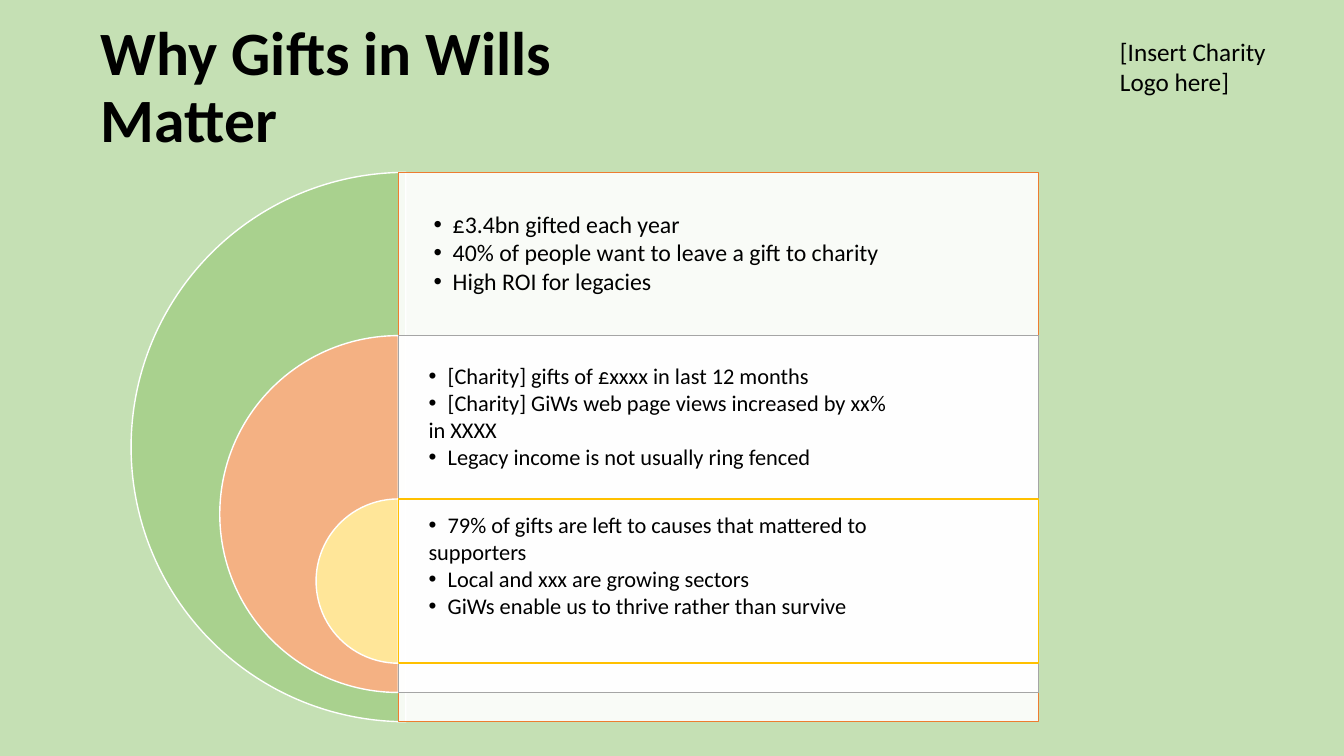
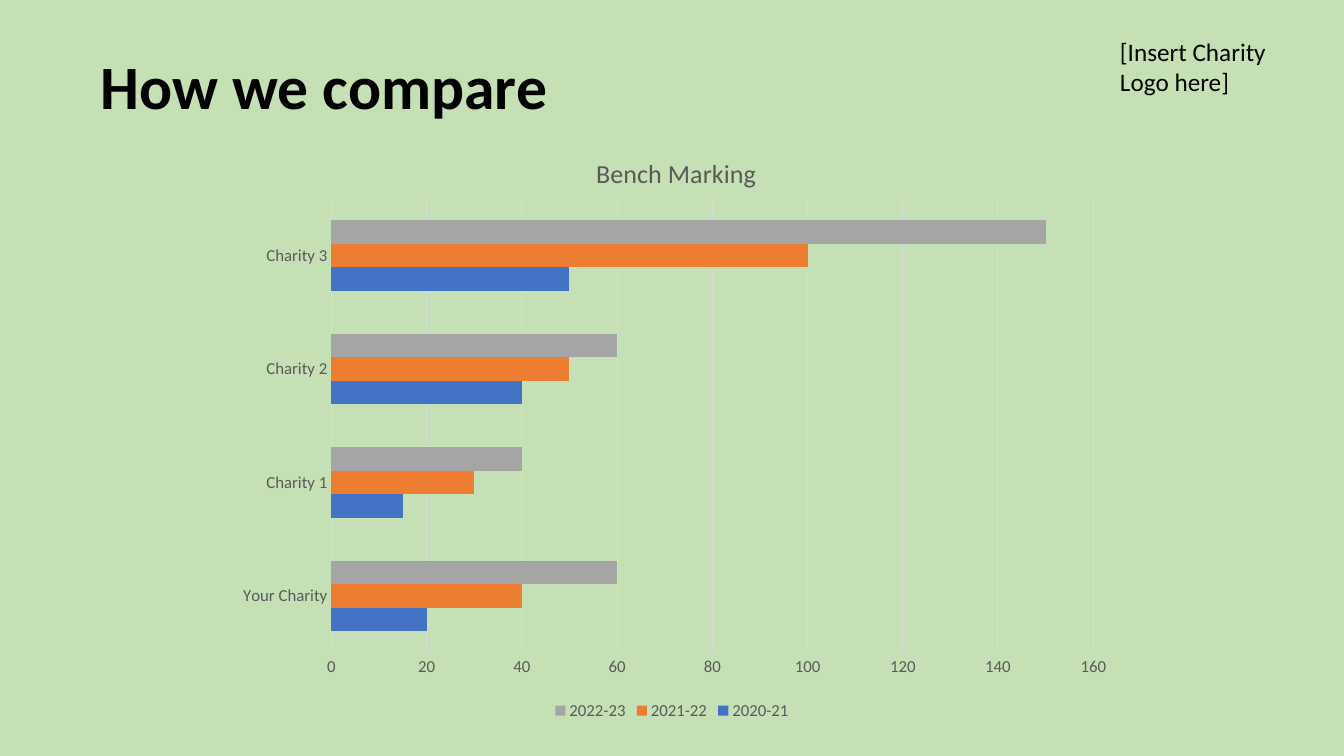
from lxml import etree
from pptx import Presentation
from pptx import util as u
from pptx.chart import data as cd
from pptx.dml.color import RGBColor
from pptx.enum import chart as ch, shapes, text
from pptx.oxml import ns, parse_xml

# Shared look
FONT = "Calibri"
BACK = RGBColor(0xC5, 0xE0, 0xB4)
BLACK = RGBColor(0, 0, 0)
WHITE = RGBColor(0xFF, 0xFF, 0xFF)
GREEN = RGBColor(0xA9, 0xD1, 0x8E)
PEACH = RGBColor(0xF4, 0xB1, 0x83)
CREAM = RGBColor(0xFF, 0xE6, 0x99)
BLUE = RGBColor(0x44, 0x72, 0xC4)
ORANGE = RGBColor(0xED, 0x7D, 0x31)
GREY = RGBColor(0xA5, 0xA5, 0xA5)
GOLD = RGBColor(0xFF, 0xC0, 0x00)
INK = RGBColor(0x59, 0x59, 0x59)
PALE = RGBColor(0xD9, 0xD9, 0xD9)

# Boxes in inches: left, top, width, height
HEAD = (0.9, 0.16, 6.45, 1.45)
MARK = (11.01, 0.31, 1.78, 1.62)
RINGS = (1.3, 1.71, 9, 5.45)
GRAPH = (2.22, 1.26, 8.89, 5.93)

# Each ring: pie fill, panel line, text size, spare space below, lines (bulleted, text)
ROWS = [
    (GREEN, ORANGE, 17, 0, [
        (True, "£3.4bn gifted each year"),
        (True, "40% of people want to leave a gift to charity"),
        (True, "High ROI for legacies")]),
    (PEACH, GREY, 16, 0, [
        (True, "[Charity] gifts of £xxxx in last 12 months"),
        (True, "[Charity] GiWs web page views increased by xx%"),
        (False, "in XXXX"),
        (True, "Legacy income is not usually ring fenced")]),
    (CREAM, GOLD, 16, 0.28, [
        (True, "79% of gifts are left to causes that mattered to"),
        (False, "supporters"),
        (True, "Local and xxx are growing sectors"),
        (True, "GiWs enable us to thrive rather than survive")]),
]

CATS = ["Your Charity", "Charity 1", "Charity 2", "Charity 3"]
SERIES = [
    ("2020-21", (20, 15, 40, 50), BLUE),
    ("2021-22", (40, 30, 50, 100), ORANGE),
    ("2022-23", (60, 40, 60, 150), GREY),
]


def inch(*box):
    return [u.Inches(v) for v in box]


def place(shape, box):
    shape.left, shape.top, shape.width, shape.height = inch(*box)


def style(font, size, color, bold=False):
    font.name, font.size, font.bold = FONT, u.Pt(size), bold
    font.color.rgb = color


def write(par, words, size, bold=False):
    run = par.add_run()
    run.text = words
    style(run.font, size, BLACK, bold)


def start(prs, layout, words):
    """Add a slide with its heading and the logo note."""
    slide = prs.slides.add_slide(prs.slide_layouts[layout])
    title = slide.shapes.title
    place(title, HEAD)
    frame = title.text_frame
    frame.auto_size = text.MSO_AUTO_SIZE.NONE
    frame.vertical_anchor = text.MSO_ANCHOR.MIDDLE
    par = frame.paragraphs[0]
    par.alignment = text.PP_ALIGN.LEFT
    par.line_spacing = 0.9
    write(par, words, 44, True)

    note = slide.shapes.add_textbox(*inch(*MARK)).text_frame
    note.word_wrap = True
    write(note.paragraphs[0], "[Insert Charity Logo here]", 18)
    return slide


def block(slide, kind, box, fill, line):
    shape = slide.shapes.add_shape(kind, *inch(*box))
    shape.shadow.inherit = False
    shape.fill.solid()
    shape.fill.fore_color.rgb = fill
    shape.line.color.rgb = line
    shape.line.width = u.Pt(1)
    return shape


def bullets(slide, holder, box, size, spare, lines):
    """Fill a body placeholder and bring it to the front."""
    place(holder, box)
    slide.shapes._spTree.append(holder._element)
    frame = holder.text_frame
    frame.word_wrap = True
    frame.auto_size = text.MSO_AUTO_SIZE.NONE
    frame.vertical_anchor = text.MSO_ANCHOR.MIDDLE
    frame.margin_left = frame.margin_right = frame.margin_top = u.Inches(0.07)
    frame.margin_bottom = u.Inches(0.07 + spare)
    for i, (dot, words) in enumerate(lines):
        par = frame.add_paragraph() if i else frame.paragraphs[0]
        par.alignment = text.PP_ALIGN.LEFT
        par.line_spacing = 0.9
        par.space_before, par.space_after = u.Pt(0), u.Pt(2)
        props = par._p.get_or_add_pPr()
        props.set("marL", str(u.Inches(0.19)))
        props.set("indent", str(-u.Inches(0.19)))
        mark = etree.SubElement(props, ns.qn("a:buChar" if dot else "a:buNone"))
        if dot:
            mark.set("char", "•")
        write(par, words, size)


def rings(slide, box):
    """Nested half circles, each with a panel and a list to its right."""
    left, top, width, height = box
    edge, step, shrink = left + 2.65, 1.62, 1.91
    for i, (fill, line, *_) in enumerate(ROWS):
        size, y = height - shrink * i, top + step * i
        x = edge - size / 2 if i else left
        pie = block(slide, shapes.MSO_SHAPE.PIE, (x, y, size, size), fill, WHITE)
        pie.adjustments[0], pie.adjustments[1] = 54, 162
        panel = block(slide, shapes.MSO_SHAPE.RECTANGLE,
                      (edge, y, left + width - edge, size), WHITE, line)
        color = panel.fill._xPr.find(".//" + ns.qn("a:srgbClr"))
        etree.SubElement(color, ns.qn("a:alpha")).set("val", "90000")

    # Lists
    *bodies, extra = list(slide.placeholders)[1:]
    extra._element.getparent().remove(extra._element)
    for i, (body, (_, _, size, spare, lines)) in enumerate(zip(bodies, ROWS)):
        x = edge + (0.23 if i else 0.28)
        area = (x, top + step * i, left + width - x, step)
        bullets(slide, body, area, size, spare, lines)


def layout(node, **parts):
    """Fix a chart part at shares of the chart area."""
    old = node.find(ns.qn("c:layout"))
    if old is not None:
        node.remove(old)
    inner = '<c:layoutTarget val="inner"/>' if "w" in parts else ""
    modes = "".join(f'<c:{k}Mode val="edge"/>' for k in "xy")
    sizes = "".join(f'<c:{k} val="{v}"/>' for k, v in parts.items())
    return parse_xml(f'<c:layout {ns.nsdecls("c")}><c:manualLayout>'
                     f'{inner}{modes}{sizes}</c:manualLayout></c:layout>')


def graph(slide, box):
    """Clustered bars with title and legend."""
    data = cd.CategoryChartData()
    data.categories = CATS
    for name, vals, _ in SERIES:
        data.add_series(name, vals)
    chart = slide.shapes.add_chart(
        ch.XL_CHART_TYPE.BAR_CLUSTERED, *inch(*box), data).chart
    style(chart.font, 12, INK)

    # Title
    chart.has_title = True
    run = chart.chart_title.text_frame.paragraphs[0].add_run()
    run.text = "Bench Marking"
    style(run.font, 18.6, INK)
    head = chart.chart_title._element
    head.find(ns.qn("c:tx")).addnext(layout(head, x=0.41, y=0.04))

    # Bars
    plot = chart.plots[0]
    plot.gap_width, plot.overlap = 182, 0
    plot.vary_by_categories = False
    for bar, (_, _, color) in zip(plot.series, SERIES):
        bar.format.fill.solid()
        bar.format.fill.fore_color.rgb = color
    area = chart._chartSpace.chart.plotArea
    area.insert(0, layout(area, x=0.12, y=0.12, w=0.85, h=0.76))

    # Axes
    cat, val = chart.category_axis, chart.value_axis
    for axis in (cat, val):
        axis.major_tick_mark = axis.minor_tick_mark = ch.XL_TICK_MARK.NONE
        style(axis.tick_labels.font, 12, INK)
    val.minimum_scale, val.maximum_scale, val.major_unit = 0, 160, 20
    val.format.line.fill.background()
    for line in (cat.format.line, val.major_gridlines.format.line):
        line.color.rgb = PALE
        line.width = u.Pt(0.75)

    # Legend
    chart.has_legend = True
    chart.legend.position = ch.XL_LEGEND_POSITION.BOTTOM
    chart.legend.include_in_layout = False
    style(chart.legend.font, 12, INK)


def main():
    prs = Presentation()
    prs.slide_width, prs.slide_height = inch(13.33, 7.5)
    fill = prs.slide_master.background.fill
    fill.solid()
    fill.fore_color.rgb = BACK
    rings(start(prs, 4, "Why Gifts in Wills Matter"), RINGS)
    graph(start(prs, 5, "How we compare"), GRAPH)
    prs.save("out.pptx")


if __name__ == "__main__":
    main()
